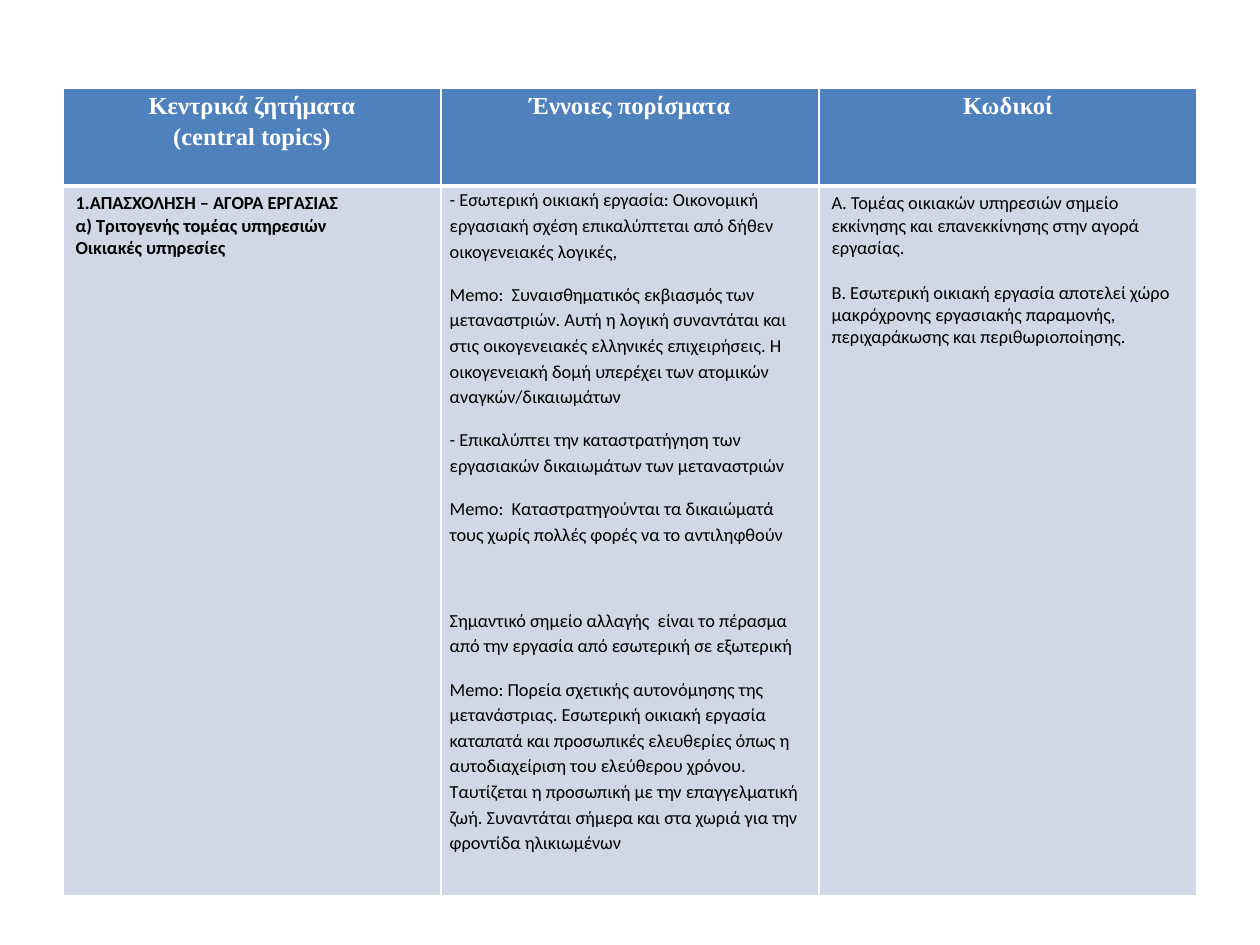
from dataclasses import dataclass

from lxml import etree
from pptx import Presentation
from pptx.dml.color import RGBColor
from pptx.enum.text import PP_ALIGN
from pptx.oxml.ns import qn
from pptx.util import Pt

CENTER, LEFT = PP_ALIGN.CENTER, PP_ALIGN.LEFT


@dataclass(frozen=True)
class Theme:
    white: str = "FFFFFF"
    black: str = "000000"
    header_fill: str = "4F81BD"
    body_fill: str = "D0D8E8"
    header_font: str = "Times New Roman"
    body_font: str = "Calibri"
    header_size: float = 14
    body_size: float = 10.5
    thin: float = 1
    thick: float = 3


class SlideBuilder:
    def __init__(self, slide, theme):
        self.slide, self.theme = slide, theme

    def table(self, left, top, col_widths, row_heights):
        frame = self.slide.shapes.add_table(
            len(row_heights), len(col_widths), Pt(left), Pt(top),
            Pt(sum(col_widths)), Pt(sum(row_heights)))
        table = frame.table
        table.horz_banding = False
        for col, width in zip(table.columns, col_widths):
            col.width = Pt(width)
        for row, height in zip(table.rows, row_heights):
            row.height = Pt(height)
        return table

    def borders(self, cell, top, bottom):
        thin = self.theme.thin
        widths = {"a:lnL": thin, "a:lnR": thin, "a:lnT": top, "a:lnB": bottom}
        tc_pr = cell._tc.get_or_add_tcPr()
        for i, (tag, width) in enumerate(widths.items()):
            ln = etree.Element(qn(tag), w=str(Pt(width)))
            fill = etree.SubElement(ln, qn("a:solidFill"))
            etree.SubElement(fill, qn("a:srgbClr"), val=self.theme.white)
            tc_pr.insert(i, ln)

    def cell(self, cell, paragraphs, header=False, bold=False, tight=False,
             spacing=1.0, after=0, gaps=None):
        t = self.theme
        cell.fill.solid()
        cell.fill.fore_color.rgb = RGBColor.from_string(
            t.header_fill if header else t.body_fill)
        self.borders(cell, *((t.thin, t.thick) if header else (t.thick, t.thin)))
        if tight:
            cell.margin_left = cell.margin_right = Pt(5)
            cell.margin_top = cell.margin_bottom = 0
        tf = cell.text_frame
        for i, text in enumerate(paragraphs):
            p = tf.paragraphs[0] if i == 0 else tf.add_paragraph()
            p.text = text
            p.alignment = CENTER if header else LEFT
            p.line_spacing = spacing
            p.space_after = Pt((gaps or {}).get(i, after))
            p.font.name = t.header_font if header else t.body_font
            p.font.size = Pt(t.header_size if header else t.body_size)
            p.font.bold = bold
            p.font.color.rgb = RGBColor.from_string(t.white if header else t.black)


HEADERS = [["Κεντρικά ζητήματα", "(central topics)"], ["Έννοιες πορίσματα"], ["Κωδικοί"]]
TOPICS = [
    "1.ΑΠΑΣΧΟΛΗΣΗ – ΑΓΟΡΑ ΕΡΓΑΣΙΑΣ",
    "α) Τριτογενής τομέας υπηρεσιών\nΟικιακές υπηρεσίες",
]
FINDINGS = [
    "- Εσωτερική οικιακή εργασία: Οικονομική εργασιακή σχέση επικαλύπτεται από δήθεν "
    "οικογενειακές λογικές,",
    "Memo:  Συναισθηματικός εκβιασμός των μεταναστριών. Αυτή η λογική συναντάται και στις "
    "οικογενειακές ελληνικές επιχειρήσεις. Η οικογενειακή δομή υπερέχει των ατομικών "
    "αναγκών/δικαιωμάτων",
    "- Επικαλύπτει την καταστρατήγηση των εργασιακών δικαιωμάτων των μεταναστριών",
    "Memo:  Καταστρατηγούνται τα δικαιώματά τους χωρίς πολλές φορές να το αντιληφθούν",
    "Σημαντικό σημείο αλλαγής  είναι το πέρασμα από την εργασία από εσωτερική σε εξωτερική",
    "Memo: Πορεία σχετικής αυτονόμησης της μετανάστριας. Εσωτερική οικιακή εργασία καταπατά "
    "και προσωπικές ελευθερίες όπως η αυτοδιαχείριση του ελεύθερου χρόνου. Ταυτίζεται η "
    "προσωπική με την επαγγελματική ζωή. Συναντάται σήμερα και στα χωριά για την φροντίδα "
    "ηλικιωμένων",
]
CODES = [
    "Α. Τομέας οικιακών υπηρεσιών σημείο εκκίνησης και επανεκκίνησης στην αγορά εργασίας.",
    "Β. Εσωτερική οικιακή εργασία αποτελεί χώρο μακρόχρονης εργασιακής παραμονής, "
    "περιχαράκωσης και περιθωριοποίησης.",
]


def main():
    prs = Presentation()
    prs.slide_width, prs.slide_height = Pt(720), Pt(540)
    s = SlideBuilder(prs.slides.add_slide(prs.slide_layouts[6]), Theme())

    table = s.table(36, 50.4, [216] * 3, [56, 405.5])
    for col, lines in enumerate(HEADERS):
        s.cell(table.cell(0, col), lines, header=True, bold=True, tight=True, spacing=1.15)
    s.cell(table.cell(1, 0), TOPICS, bold=True)
    s.cell(table.cell(1, 1), FINDINGS, tight=True, spacing=1.15, after=10, gaps={3: 34.7})
    s.cell(table.cell(1, 2), CODES, gaps={0: 12.8})

    prs.save("out.pptx")


if __name__ == "__main__":
    main()
